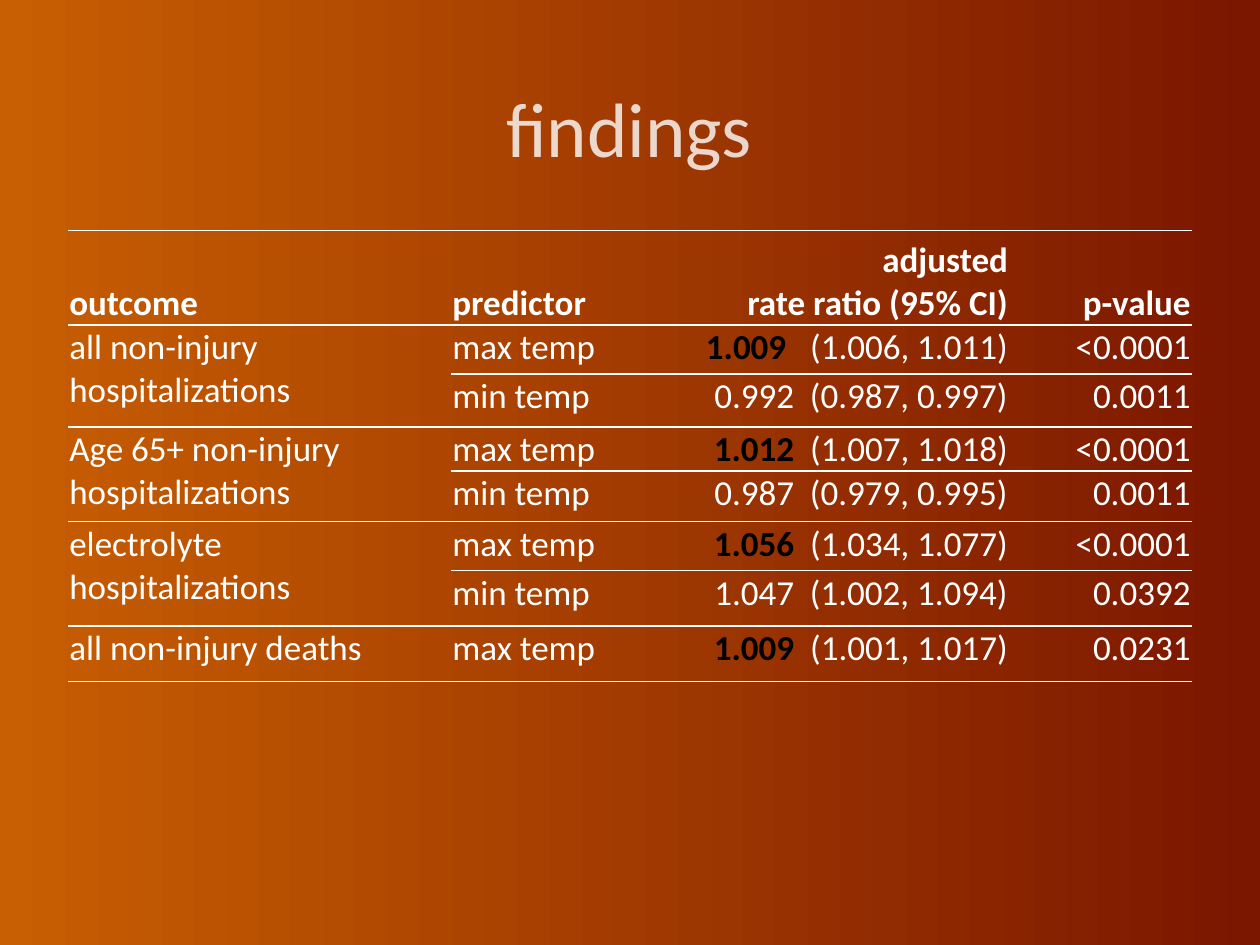
"""Build the findings slide: a title over a table of adjusted rate ratios."""
from dataclasses import dataclass

from lxml import etree
from pptx import Presentation
from pptx.dml.color import RGBColor
from pptx.enum.text import MSO_ANCHOR, PP_ALIGN
from pptx.oxml import parse_xml
from pptx.oxml.ns import nsdecls, qn
from pptx.util import Inches, Pt

LEFT, CENTER, RIGHT = PP_ALIGN.LEFT, PP_ALIGN.CENTER, PP_ALIGN.RIGHT
TOP, BOTTOM = MSO_ANCHOR.TOP, MSO_ANCHOR.BOTTOM


@dataclass(frozen=True)
class Theme:
    font: str = "Calibri"
    title_size: int = 44
    body_size: int = 20
    rule_width: int = 1
    text: str = "FFFFFF"
    emphasis: str = "000000"
    background: tuple = ("C85F02", "7B1600")
    title_opacity: tuple = ((0, 70), (50, 80), (100, 90))


THEME = Theme()
COLUMN_WIDTHS = (3.04, 1.7, 2.73, 1.45)
ROW_HEIGHTS = (0.75, 0.39, 0.42, 0.35, 0.4, 0.39, 0.44, 0.44)
ALIGNMENTS = (LEFT, LEFT, RIGHT, RIGHT)
HEADERS = ("outcome", "predictor", "adjusted\nrate ratio (95% CI)", "p-value")
FINDINGS = (
    ("all non-injury hospitalizations", (
        ("max temp", "1.009 ", "  (1.006, 1.011)", "<0.0001"),
        ("min temp", "0.992 ", " (0.987, 0.997)", "0.0011"))),
    ("Age 65+ non-injury hospitalizations", (
        ("max temp", "1.012 ", " (1.007, 1.018)", "<0.0001"),
        ("min temp", "0.987 ", " (0.979, 0.995)", "0.0011"))),
    ("electrolyte hospitalizations", (
        ("max temp", "1.056 ", " (1.034, 1.077)", "<0.0001"),
        ("min temp", "1.047 ", " (1.002, 1.094)", "0.0392"))),
    ("all non-injury deaths", (
        ("max temp", "1.009 ", " (1.001, 1.017)", "0.0231"),)),
)


def add_text(paragraph, text, *, size=THEME.body_size, bold=False, color=THEME.text, align=LEFT):
    """Append a formatted run to the paragraph and return it."""
    paragraph.alignment = align
    run = paragraph.add_run()
    run.text = text
    run.font.name = THEME.font
    run.font.size = Pt(size)
    run.font.bold = bold
    run.font.color.rgb = RGBColor.from_string(color)
    return run


def paint_background(slide):
    """Fill the slide with the left-to-right gradient."""
    fill = slide.background.fill
    fill.gradient()
    fill.gradient_angle = 0
    for stop, color in zip(fill.gradient_stops, THEME.background):
        stop.color.rgb = RGBColor.from_string(color)


def fade_text(run):
    """Give the run a gradient of rising opacity."""
    stops = "".join(
        f'<a:gs pos="{position * 1000}"><a:srgbClr val="{THEME.text}">'
        f'<a:alpha val="{opacity * 1000}"/></a:srgbClr></a:gs>'
        for position, opacity in THEME.title_opacity)
    gradient = parse_xml(
        f'<a:gradFill {nsdecls("a")}><a:gsLst>{stops}</a:gsLst><a:lin ang="0" scaled="0"/></a:gradFill>')
    properties = run.font._element
    properties.replace(properties.find(qn("a:solidFill")), gradient)


def add_title(slide, text):
    """Add the centred, bottom-anchored title."""
    title = slide.shapes.add_textbox(Inches(1.89), Inches(0.3), Inches(6.21), Inches(1.12))
    frame = title.text_frame
    frame.word_wrap = True
    frame.vertical_anchor = BOTTOM
    fade_text(add_text(frame.paragraphs[0], text, size=THEME.title_size, align=CENTER))


def style_cell(cell, anchor):
    """Set the cell's margins, anchor, horizontal rules and empty fill."""
    cell.margin_left = cell.margin_right = cell.margin_top = Inches(0.01)
    cell.margin_bottom = 0
    cell.vertical_anchor = anchor
    ruled = ("a:lnB",) if cell.is_spanned else ("a:lnT", "a:lnB")
    properties = cell._tc.get_or_add_tcPr()
    for side in ("a:lnL", "a:lnR", "a:lnT", "a:lnB"):
        border = etree.SubElement(properties, qn(side), w=str(Pt(THEME.rule_width)))
        if side in ruled:
            paint = etree.SubElement(border, qn("a:solidFill"))
            etree.SubElement(paint, qn("a:srgbClr"), val=THEME.text)
        else:
            etree.SubElement(border, qn("a:noFill"))
    cell.fill.background()


def fill_header(table):
    """Write the bold column headings."""
    for column, (heading, align) in enumerate(zip(HEADERS, ALIGNMENTS)):
        frame = table.cell(0, column).text_frame
        for index, line in enumerate(heading.split("\n")):
            paragraph = frame.add_paragraph() if index else frame.paragraphs[0]
            add_text(paragraph, line, bold=True, align=align)


def fill_finding(table, row, predictor, ratio, interval, p_value):
    """Write one predictor's results, stressing the ratio for maximum temperature."""
    stressed = predictor == "max temp"
    _, predictor_line, ratio_line, p_line = (
        table.cell(row, column).text_frame.paragraphs[0] for column in range(len(HEADERS)))
    add_text(predictor_line, predictor)
    add_text(ratio_line, ratio, bold=stressed, align=RIGHT,
             color=THEME.emphasis if stressed else THEME.text)
    add_text(ratio_line, interval, align=RIGHT)
    add_text(p_line, p_value, align=RIGHT)


def add_findings_table(slide):
    """Add the table, merging each outcome over its predictors."""
    table = slide.shapes.add_table(
        len(ROW_HEIGHTS), len(COLUMN_WIDTHS), Inches(0.54), Inches(1.83),
        Inches(sum(COLUMN_WIDTHS)), Inches(sum(ROW_HEIGHTS))).table
    table.first_row = table.horz_banding = False
    for column, width in zip(table.columns, COLUMN_WIDTHS):
        column.width = Inches(width)
    for row, height in zip(table.rows, ROW_HEIGHTS):
        row.height = Inches(height)

    fill_header(table)
    first = 1
    for outcome, results in FINDINGS:
        last = first + len(results) - 1
        if last > first:
            table.cell(first, 0).merge(table.cell(last, 0))
        add_text(table.cell(first, 0).text_frame.paragraphs[0], outcome)
        for row, result in enumerate(results, first):
            fill_finding(table, row, *result)
        first = last + 1

    for index, row in enumerate(table.rows):
        for cell in row.cells:
            style_cell(cell, TOP if index else BOTTOM)


def main():
    """Build and save the presentation."""
    presentation = Presentation()
    presentation.slide_width, presentation.slide_height = Inches(10), Inches(7.5)
    slide = presentation.slides.add_slide(presentation.slide_layouts[6])
    paint_background(slide)
    add_title(slide, "findings")
    add_findings_table(slide)
    presentation.save("out.pptx")


if __name__ == "__main__":
    main()
